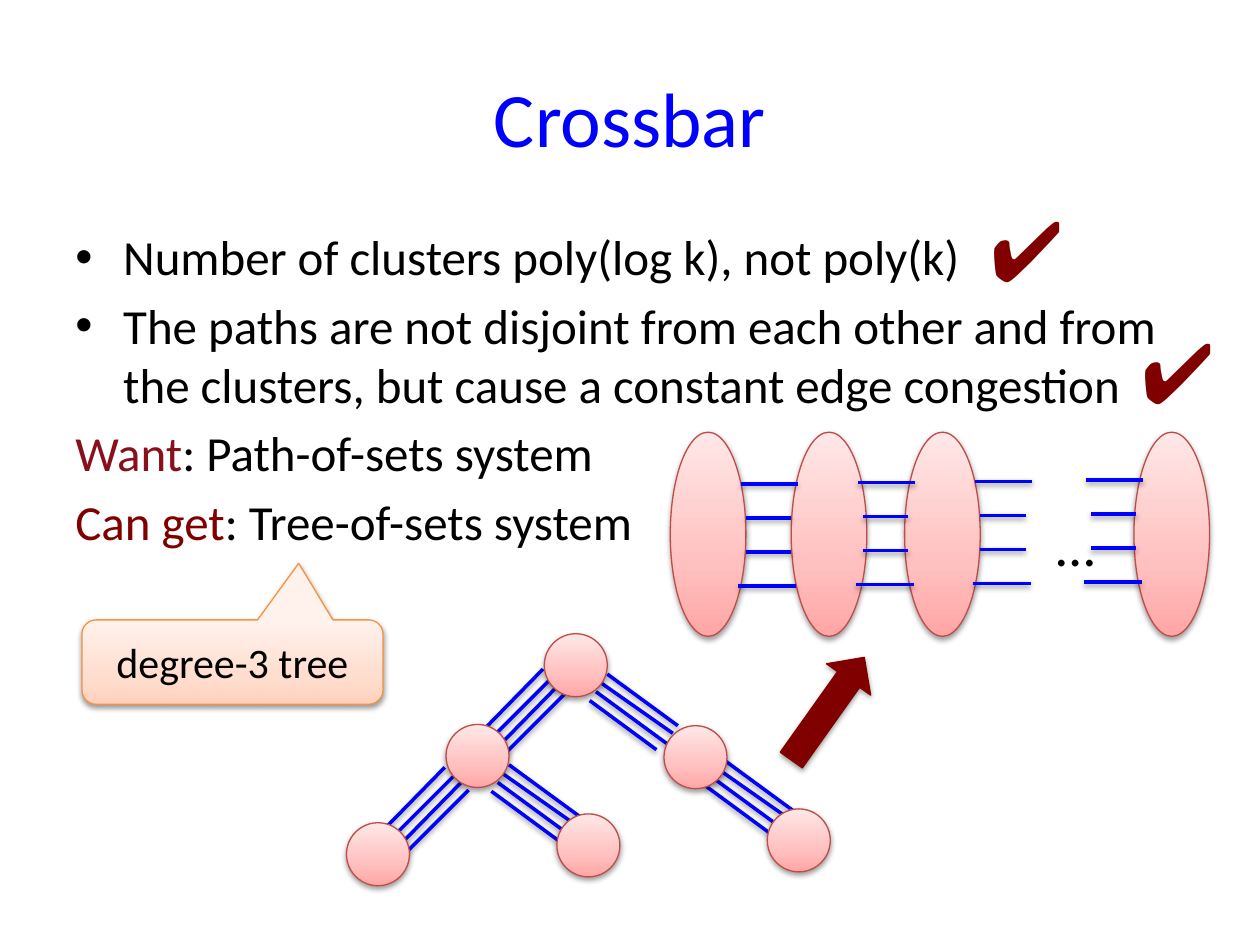
"""Build the Crossbar slide: bullet text, a path of sets, and a degree-3 tree of sets."""
from copy import deepcopy

from pptx import Presentation
from pptx.dml.color import RGBColor
from pptx.enum.shapes import MSO_CONNECTOR, MSO_SHAPE
from pptx.enum.text import MSO_ANCHOR as Anchor, PP_ALIGN as Align
from pptx.oxml.ns import qn
from pptx.oxml.xmlchemy import OxmlElement
from pptx.util import Pt

PX = 9144
THEME = {
    "black": "000000", "blue": "0000FF", "maroon": "800000", "crimson": "89101B",
    "set_line": "BF4C48", "set_fill": ((0, "FFA6A5"), (0.35, "FFC0BF"), (1, "FFE7E7")),
    "note_line": "F69240", "note_fill": ((0, "FFD2BD"), (0.35, "FFDED0"), (1, "FFF2ED")),
    "title": 44, "body": 28, "note": 24, "dots": 32, "tick": 48,
    "outline": 0.75, "edge": 2, "font": "Calibri", "tick_font": "Arial",
    "shadow": {"blurRad": 40000, "dist": 20000, "dir": 5400000, "rotWithShape": 0},
    "shadow_alpha": 38000,
}

TITLE = "Crossbar"
BODY = [
    (True, [("Number of clusters poly(log k), not poly(k)", "black")]),
    (True, [("The paths are not disjoint from each other and from the clusters, "
             "but cause a constant edge congestion", "black")]),
    (False, [("Want", "crimson"), (": Path-of-sets system", "black")]),
    (False, [("Can get", "maroon"), (": Tree-of-sets system", "black")]),
]
NOTE = "degree-3 tree"
TICKS = [(896, 249), (776, 152)]

PATH_SETS = [532, 628, 718, 900]
PATH_EDGES = [(588, 384, 633, 384), (592, 411, 628, 411),
              (592, 438, 628, 438), (586, 465, 632, 465)]
PATH_SHIFTS = [(0, 0), (93, -1), (186, -2), (274, -3)]

TREE_SETS = [(432, 503), (354, 575), (527, 576), (275, 653), (442, 646), (609, 642)]
LEFT_EDGES = [(431, 531, 385, 578), (438, 538, 389, 587),
              (444, 543, 395, 593), (450, 549, 401, 598)]
LEFT_SHIFTS = [(0, 0), (-78, 78)]
RIGHT_EDGES = [(468, 556, 521, 595), (473, 549, 529, 590),
               (477, 542, 534, 582), (482, 535, 538, 576)]
RIGHT_SHIFTS = [(0, 0), (-78, 72), (91, 67)]


def px(*lengths):
    return [length * PX for length in lengths]


def color(name):
    return RGBColor.from_string(THEME.get(name, name))


def apply(target, values):
    for name, value in values.items():
        setattr(target, name, value)


def add_run(paragraph, text, size, color_name="black", font="font"):
    run = paragraph.add_run()
    run.text = text
    apply(run.font, {"size": Pt(THEME[size]), "name": THEME[font]})
    run.font.color.rgb = color(color_name)


def add_text(slide, box, anchor=Anchor.TOP):
    frame = slide.shapes.add_textbox(*px(*box)).text_frame
    apply(frame, {"word_wrap": True, "vertical_anchor": anchor})
    return frame


def add_shadow(effects):
    shadow = OxmlElement("a:outerShdw")
    for name, value in THEME["shadow"].items():
        shadow.set(name, str(value))
    shade = OxmlElement("a:srgbClr")
    shade.set("val", THEME["black"])
    alpha = OxmlElement("a:alpha")
    alpha.set("val", str(THEME["shadow_alpha"]))
    shade.append(alpha)
    shadow.append(shade)
    effects.append(shadow)


def add_shape(slide, kind, box, line):
    shape = slide.shapes.add_shape(kind, *px(*box))
    shape.line.color.rgb = color(line)
    shape.line.width = Pt(THEME["outline"])
    shape.shadow.inherit = False
    add_shadow(shape.element.spPr.find(qn("a:effectLst")))
    return shape


def fill_gradient(shape, stops):
    shape.fill.gradient()
    shape.fill.gradient_angle = 90
    stop_list = shape.element.spPr.find(".//" + qn("a:gsLst"))
    stop_list.append(deepcopy(stop_list[-1]))
    for stop, (position, shade) in zip(shape.fill.gradient_stops, stops):
        stop.position = position
        stop.color.rgb = color(shade)


def add_set(slide, box):
    fill_gradient(add_shape(slide, MSO_SHAPE.OVAL, box, "set_line"), THEME["set_fill"])


def add_edges(slide, edges, shifts):
    for dx, dy in shifts:
        for x1, y1, x2, y2 in edges:
            ends = px(x1 + dx, y1 + dy, x2 + dx, y2 + dy)
            edge = slide.shapes.add_connector(MSO_CONNECTOR.STRAIGHT, *ends)
            edge.line.color.rgb = color("blue")
            edge.line.width = Pt(THEME["edge"])
            effects = OxmlElement("a:effectLst")
            edge.element.spPr.append(effects)
            add_shadow(effects)


def add_bullet(paragraph):
    properties = paragraph._p.get_or_add_pPr()
    properties.set("marL", str(38 * PX))
    properties.set("indent", str(-38 * PX))
    for tag, name, value in (("a:buFont", "typeface", "Arial"), ("a:buChar", "char", "•")):
        item = OxmlElement(tag)
        item.set(name, value)
        properties.append(item)


def add_body(slide):
    frame = add_text(slide, (50, 175, 900, 532))
    for index, (bulleted, runs) in enumerate(BODY):
        paragraph = frame.add_paragraph() if index else frame.paragraphs[0]
        paragraph.space_before = Pt(0.2 * THEME["body"])
        if bulleted:
            add_bullet(paragraph)
        for text, shade in runs:
            add_run(paragraph, text, "body", shade)


def add_note(slide):
    note = add_shape(slide, MSO_SHAPE.ROUNDED_RECTANGULAR_CALLOUT, (65, 492, 239, 67), "note_line")
    fill_gradient(note, THEME["note_fill"])
    for index, value in enumerate((0.22, -1.17, 0.17)):
        note.adjustments[index] = value
    note.text_frame.vertical_anchor = Anchor.MIDDLE
    paragraph = note.text_frame.paragraphs[0]
    paragraph.alignment = Align.CENTER
    add_run(paragraph, NOTE, "note")


def main():
    presentation = Presentation()
    apply(presentation, {"slide_width": 1000 * PX, "slide_height": 750 * PX})
    slide = presentation.slides.add_slide(presentation.slide_layouts[6])

    title = add_text(slide, (50, 30, 900, 125), Anchor.MIDDLE).paragraphs[0]
    title.alignment = Align.CENTER
    add_run(title, TITLE, "title", "blue")
    add_body(slide)

    for left in PATH_SETS:
        add_set(slide, (left, 343, 60, 162))
    add_run(add_text(slide, (829, 400, 41, 39)).paragraphs[0], "…", "dots")
    add_edges(slide, PATH_EDGES, PATH_SHIFTS)

    add_note(slide)
    add_edges(slide, LEFT_EDGES, LEFT_SHIFTS)
    add_edges(slide, RIGHT_EDGES, RIGHT_SHIFTS)
    for left, top in TREE_SETS:
        add_set(slide, (left, top, 50, 50))

    arrow = add_shape(slide, MSO_SHAPE.RIGHT_ARROW, (607, 541, 100, 43), "maroon")
    arrow.fill.solid()
    arrow.fill.fore_color.rgb = color("maroon")
    arrow.rotation = 305.4
    for left, top in TICKS:
        tick = add_text(slide, (left, top, 89, 91)).paragraphs[0]
        add_run(tick, "✔", "tick", "maroon", "tick_font")

    presentation.save("out.pptx")


if __name__ == "__main__":
    main()
